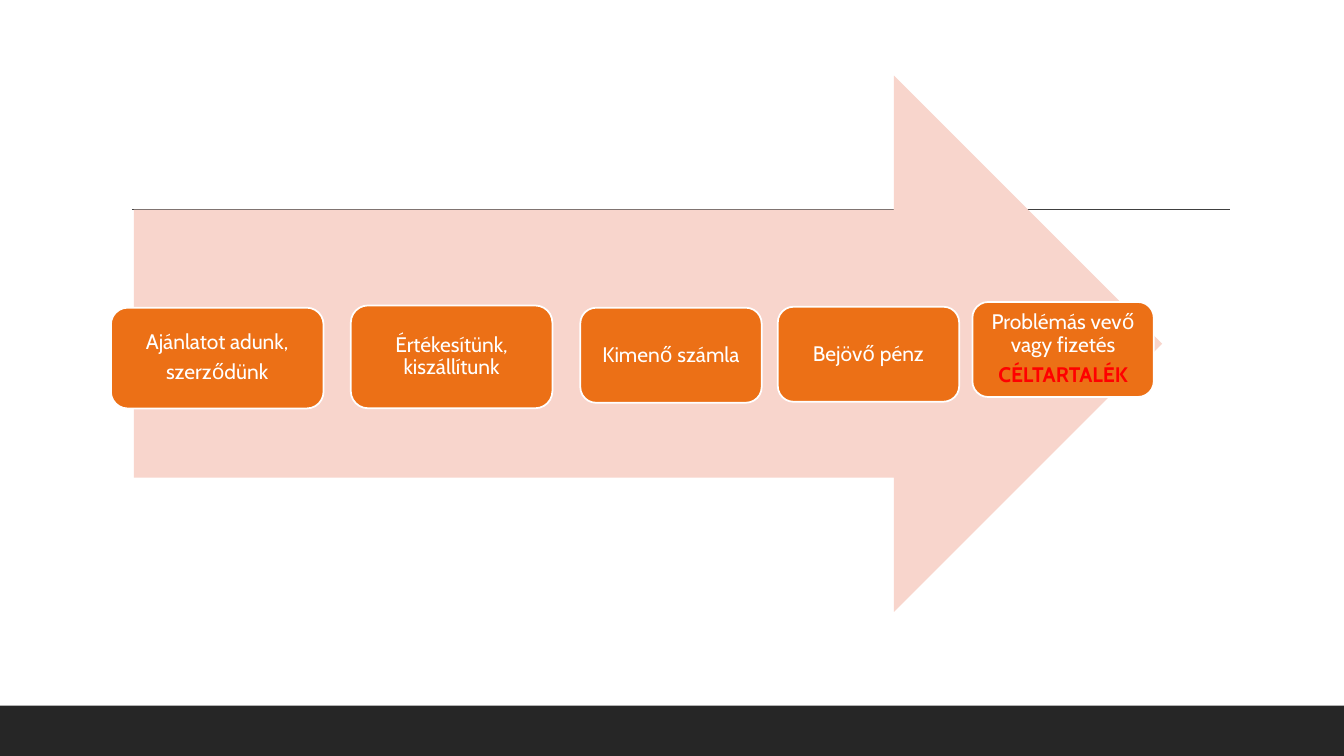
from dataclasses import dataclass

from lxml import etree
from pptx import Presentation
from pptx.dml.color import RGBColor
from pptx.enum import shapes, text
from pptx.oxml import ns
from pptx.util import Pt


@dataclass(frozen=True)
class Theme:
    """Colours, font and type size of the slide."""
    footer: str = "262626"
    rule: str = "404040"
    arrow: str = "F8D5CC"
    step: str = "EC7016"
    light: str = "FFFFFF"
    warning: str = "FF0000"
    font: str = "Cabin"
    size: float = 15


THEME = Theme()

STEPS = [
    ((79.2, 219.8, 151.9, 72), ["Ajánlatot adunk,", "szerződünk"], None),
    ((250.6, 218.2, 144, 73.4), ["Értékesítünk, kiszállítunk"], None),
    ((414.5, 219.8, 129.6, 67.9), ["Kimenő számla"], None),
    ((555.6, 219.1, 129.6, 67.9), ["Bejövő pénz"], None),
    ((694.6, 215.7, 129.6, 67.9), ["Problémás vevő vagy fizetés"], "CÉLTARTALÉK"),
]


def add_block(slide, kind, box, fill, outline=None):
    """Add a flat preset shape and return it."""
    block = slide.shapes.add_shape(kind, *map(Pt, box))
    block.shadow.inherit = False
    block.fill.solid()
    block.fill.fore_color.rgb = RGBColor.from_string(fill)
    if outline:
        block.line.color.rgb = RGBColor.from_string(outline)
        block.line.width = Pt(1.25)
    else:
        block.line.fill.background()
    return block


def add_rule(slide, left, right, top):
    """Add a thin horizontal line."""
    rule = slide.shapes.add_connector(
        shapes.MSO_CONNECTOR.STRAIGHT, Pt(left), Pt(top), Pt(right), Pt(top))
    rule.line.color.rgb = RGBColor.from_string(THEME.rule)
    rule.line.width = Pt(1)
    etree.SubElement(rule.element.spPr, ns.qn("a:effectLst"))


def write(paragraph, wording, color=THEME.light, bold=False):
    """Write one centred, formatted paragraph."""
    paragraph.alignment = text.PP_ALIGN.CENTER
    paragraph.line_spacing = 0.9
    paragraph.space_after = Pt(5.25)
    run = paragraph.add_run()
    run.text = wording
    run.font.name = THEME.font
    run.font.size = Pt(THEME.size)
    run.font.bold = bold
    run.font.color.rgb = RGBColor.from_string(color)


def add_step(slide, box, wording, warning):
    """Add a rounded process step with an optional warning below its text."""
    step = add_block(slide, shapes.MSO_SHAPE.ROUNDED_RECTANGLE, box,
                     THEME.step, THEME.light)
    frame = step.text_frame
    frame.word_wrap = True
    frame.vertical_anchor = text.MSO_ANCHOR.MIDDLE
    frame.margin_left = frame.margin_right = Pt(4.5)
    frame.margin_top = frame.margin_bottom = Pt(4.5)
    write(frame.paragraphs[0], wording[0])
    for line in wording[1:]:
        write(frame.add_paragraph(), line)
    if warning:
        write(frame.add_paragraph(), warning, color=THEME.warning, bold=True)


def main():
    """Build and save the sales process slide."""
    deck = Presentation()
    deck.slide_width, deck.slide_height = Pt(960), Pt(540)
    slide = deck.slides.add_slide(deck.slide_layouts[6])
    add_block(slide, shapes.MSO_SHAPE.RECTANGLE, (0, 504, 960, 36), THEME.footer)
    add_rule(slide, 94.3, 878.8, 149.5)
    add_block(slide, shapes.MSO_SHAPE.RIGHT_ARROW, (95.7, 54, 734.4, 383), THEME.arrow)
    for box, wording, warning in STEPS:
        add_step(slide, box, wording, warning)
    deck.save("out.pptx")


if __name__ == "__main__":
    main()
